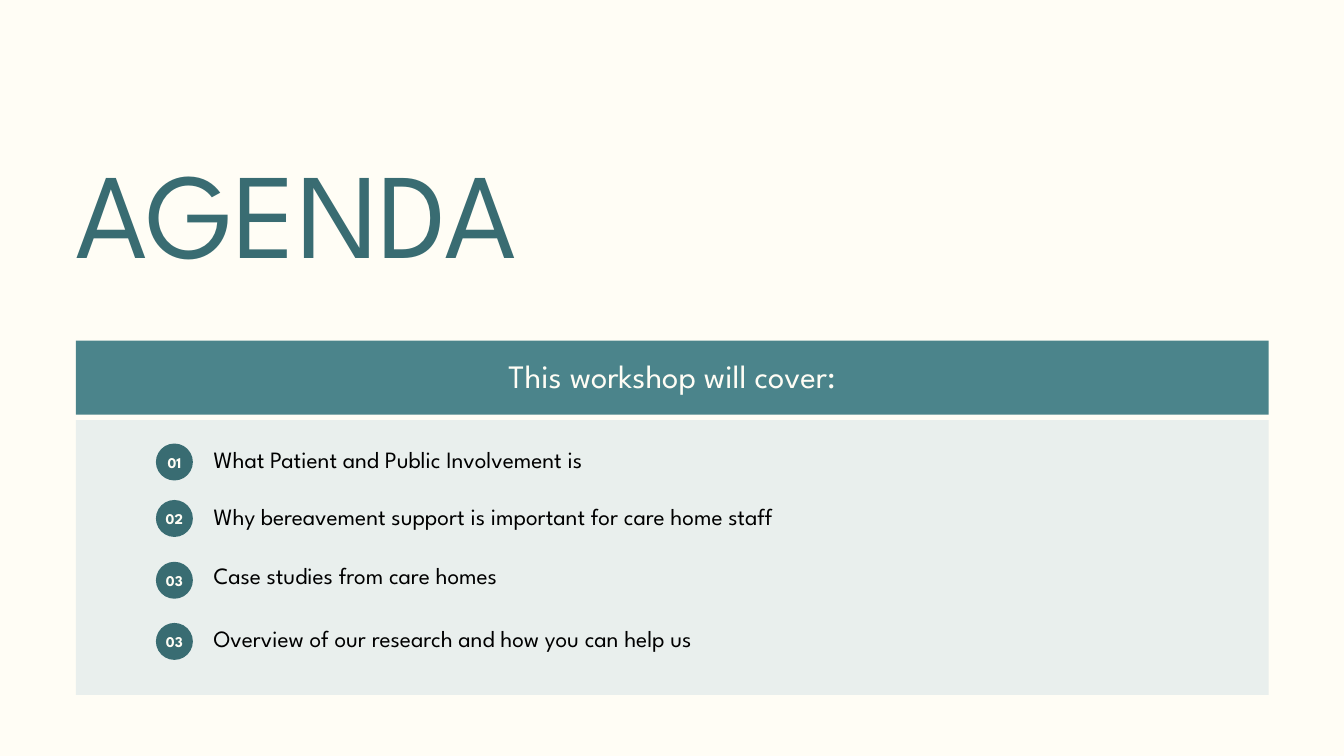
import pptx
import pptx.util
from pptx.dml.color import RGBColor
from pptx.enum.shapes import MSO_SHAPE
from pptx.enum.text import MSO_ANCHOR, MSO_AUTO_SIZE, PP_ALIGN
from pptx.util import Inches, Pt

FONT = "League Spartan"
CREAM = RGBColor(0xFF, 0xFD, 0xF5)
PALE = RGBColor(0xE9, 0xEF, 0xED)
TEAL = RGBColor(0x4B, 0x84, 0x8B)
DARK_TEAL = RGBColor(0x39, 0x6C, 0x72)
BLACK = RGBColor(0, 0, 0)

TITLE = "AGENDA"
HEADING = "This workshop will cover:"
# badge number, badge top, text top, text
ITEMS = [
    ("01", 6.60, 6.56, "What Patient and Public Involvement is"),
    ("02", 7.44, 7.40, "Why bereavement support is important for care home staff"),
    ("03", 8.36, 8.28, "Case studies from care homes"),
    ("03", 9.27, 9.22, "Overview of our research and how you can help us"),
]

MARGIN, PANEL_WIDTH = 1.13, 17.75
BADGE_LEFT, BADGE_SIZE = 2.32, 0.55
ITEM_LEFT, ITEM_WIDTH, ITEM_HEIGHT = 3.18, 9, 0.43


def write(shape, text, size, line_spacing, color, align=PP_ALIGN.LEFT,
          anchor=MSO_ANCHOR.TOP, bold=False, wrap=True, top=0, bottom=0):
    """Fill a shape with one styled line; top and bottom are insets in inches."""
    frame = shape.text_frame
    frame.auto_size = MSO_AUTO_SIZE.NONE
    frame.word_wrap = wrap
    frame.vertical_anchor = anchor
    frame.margin_left = frame.margin_right = 0
    frame.margin_top, frame.margin_bottom = Inches(top), Inches(bottom)
    paragraph = frame.paragraphs[0]
    paragraph.alignment = align
    paragraph.line_spacing = Pt(line_spacing)
    paragraph.space_before = Pt(0)
    run = paragraph.add_run()
    run.text = text
    run.font.name = FONT
    run.font.size = Pt(size)
    run.font.bold = bold
    run.font.color.rgb = color


def add_filled(slide, kind, left, top, width, height, color):
    shape = slide.shapes.add_shape(
        kind, Inches(left), Inches(top), Inches(width), Inches(height))
    shape.shadow.inherit = False
    shape.fill.solid()
    shape.fill.fore_color.rgb = color
    shape.line.fill.background()
    return shape


def main():
    presentation = pptx.Presentation()
    presentation.slide_width = Inches(20)
    presentation.slide_height = Inches(11.25)
    slide = presentation.slides.add_slide(presentation.slide_layouts[5])
    slide.background.fill.solid()
    slide.background.fill.fore_color.rgb = CREAM

    title = slide.shapes.title
    title.left, title.top = Inches(MARGIN), Inches(2.42)
    title.width, title.height = Inches(10.07), Inches(1.81)
    write(title, TITLE, 130, 128.7, DARK_TEAL)

    add_filled(slide, MSO_SHAPE.RECTANGLE, MARGIN, 6.25, PANEL_WIDTH, 4.09, PALE)
    header = add_filled(slide, MSO_SHAPE.RECTANGLE, MARGIN, 5.07, PANEL_WIDTH, 1.1, TEAL)
    write(header, HEADING, 35, 49, CREAM, PP_ALIGN.CENTER, top=0.13)

    for number, badge_top, text_top, text in ITEMS:
        badge = add_filled(slide, MSO_SHAPE.OVAL, BADGE_LEFT, badge_top,
                           BADGE_SIZE, BADGE_SIZE, DARK_TEAL)
        write(badge, number, 16, 22.4, CREAM, PP_ALIGN.CENTER,
              MSO_ANCHOR.MIDDLE, bold=True, wrap=False, bottom=0.04)
        label = slide.shapes.add_textbox(
            Inches(ITEM_LEFT), Inches(text_top), Inches(ITEM_WIDTH), Inches(ITEM_HEIGHT))
        write(label, text, 25, 35, BLACK)

    presentation.save("out.pptx")


if __name__ == "__main__":
    main()
